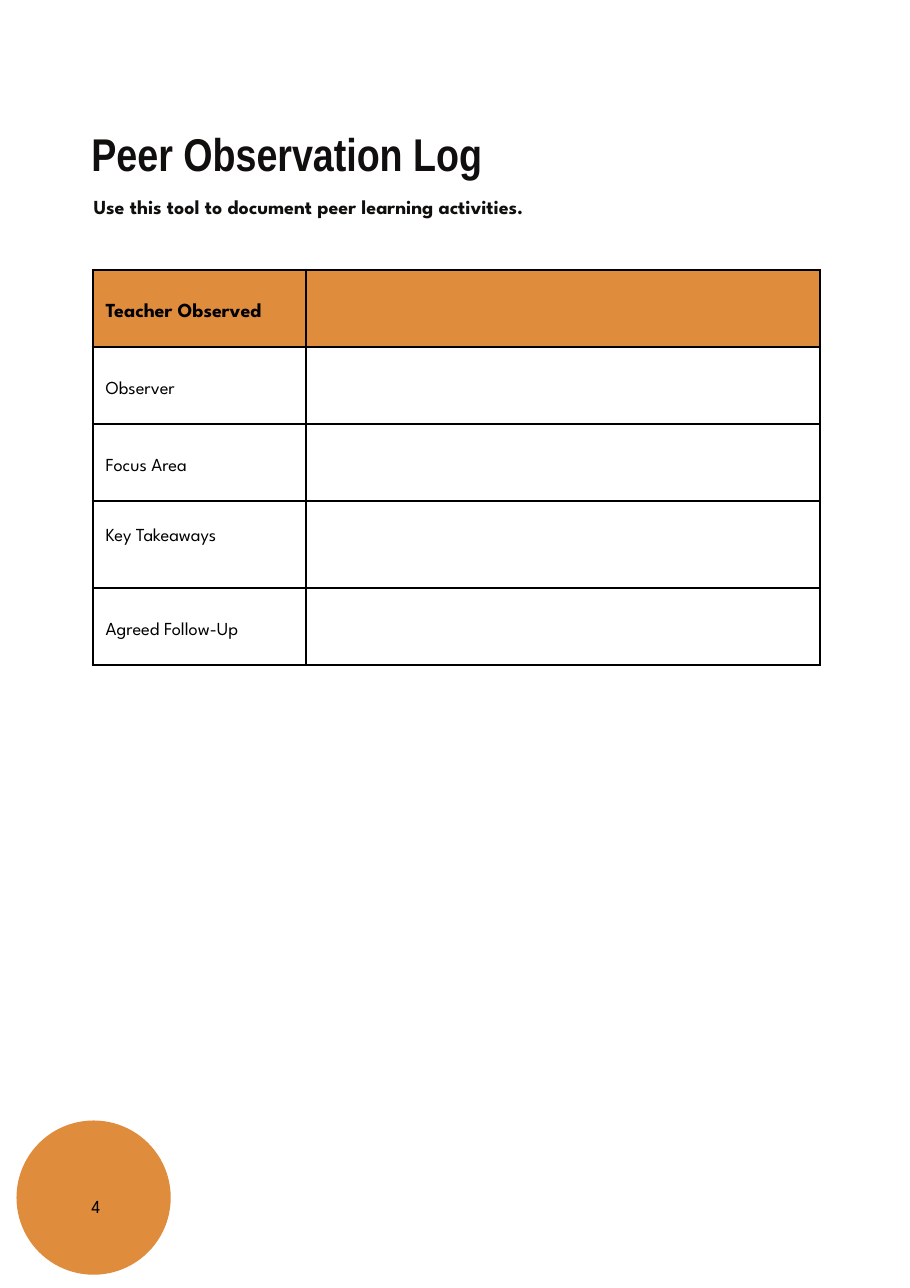
from lxml import etree
from pptx import Presentation
from pptx import util as u
from pptx.dml.color import RGBColor
from pptx.enum import shapes, text
from pptx.oxml import ns

INK = RGBColor(0x10, 0x0F, 0x0D)
BLACK = RGBColor(0, 0, 0)
WHITE = RGBColor(255, 255, 255)
ORANGE = RGBColor(0xDF, 0x8C, 0x3D)
BODY_FONT = "League Spartan"

TITLE = dict(name="Arial Narrow", size=u.Pt(30), bold=True)
STRONG = dict(name=BODY_FONT, size=u.Pt(13), bold=True)
PLAIN = dict(name=BODY_FONT, size=u.Pt(12), bold=False)

LOG_ROWS = [
    ("Teacher Observed", 0.7),
    ("Observer", 0.7),
    ("Focus Area", 0.7),
    ("Key Takeaways", 0.79),
    ("Agreed Follow-Up", 0.7),
]
LOG_COLUMNS = [1.94, 4.66]
CELL_INSET = 0.12
RAISED_INSET = 0.34


def set_margins(target, inset):
    for side in ("left", "right", "top", "bottom"):
        setattr(target, f"margin_{side}", u.Inches(inset))


def write_line(frame, words, style, color, spacing):
    para = frame.paragraphs[0]
    para.line_spacing = u.Pt(spacing)
    span = para.add_run()
    span.text = words
    for key, value in style.items():
        setattr(span.font, key, value)
    span.font.color.rgb = color


def add_label(page, box, words, style, color, spacing):
    frame = page.shapes.add_textbox(*map(u.Inches, box)).text_frame
    frame.word_wrap = True
    set_margins(frame, 0)
    write_line(frame, words, style, color, spacing)


def add_heading(page, left, top, width):
    add_label(page, (left, top, width, 0.45),
              "Peer Observation Log", TITLE, INK, 30)
    add_label(page, (left + 0.02, top + 0.51, width, 0.53),
              "Use this tool to document peer learning activities.",
              STRONG, INK, 18.2)


def add_borders(cell):
    properties = cell._tc.get_or_add_tcPr()
    for side in ("lnL", "lnR", "lnT", "lnB"):
        line = etree.SubElement(properties, ns.qn(f"a:{side}"),
                                w=str(u.Pt(1.5)))
        fill = etree.SubElement(line, ns.qn("a:solidFill"))
        etree.SubElement(fill, ns.qn("a:srgbClr"), val=str(BLACK))


def add_log(page, left, top):
    heights = [height for _, height in LOG_ROWS]
    box = (left, top, sum(LOG_COLUMNS), sum(heights))
    table = page.shapes.add_table(
        len(LOG_ROWS), len(LOG_COLUMNS), *map(u.Inches, box)).table
    table.first_row = table.horz_banding = False
    for column, width in zip(table.columns, LOG_COLUMNS):
        column.width = u.Inches(width)
    for index, (label, height) in enumerate(LOG_ROWS):
        row = table.rows[index]
        row.height = u.Inches(height)
        is_header = index == 0
        for cell in row.cells:
            add_borders(cell)
            cell.fill.solid()
            cell.fill.fore_color.rgb = ORANGE if is_header else WHITE
            set_margins(cell, CELL_INSET)
            cell.vertical_anchor = text.MSO_ANCHOR.MIDDLE
        name_cell = row.cells[0]
        if label == "Key Takeaways":
            name_cell.margin_bottom = u.Inches(RAISED_INSET)
        write_line(name_cell.text_frame, label,
                   STRONG if is_header else PLAIN, BLACK,
                   18.2 if is_header else 16.8)


def add_page_number(page, left, top, size):
    circle = page.shapes.add_shape(
        shapes.MSO_SHAPE.OVAL, *map(u.Inches, (left, top, size, size)))
    circle.shadow.inherit = False
    circle.fill.solid()
    circle.fill.fore_color.rgb = ORANGE
    circle.line.fill.background()
    add_label(page, (left + 0.68, top + 0.64, size, 0.25),
              "4", PLAIN, BLACK, 16.8)


def main():
    deck = Presentation()
    deck.slide_width = u.Inches(8.26)
    deck.slide_height = u.Inches(11.69)
    page = deck.slides.add_slide(deck.slide_layouts[6])
    add_heading(page, 0.83, 1.22, 6.42)
    add_log(page, 0.84, 2.45)
    add_page_number(page, 0.15, 10.17, 1.4)
    deck.save("out.pptx")


if __name__ == "__main__":
    main()
